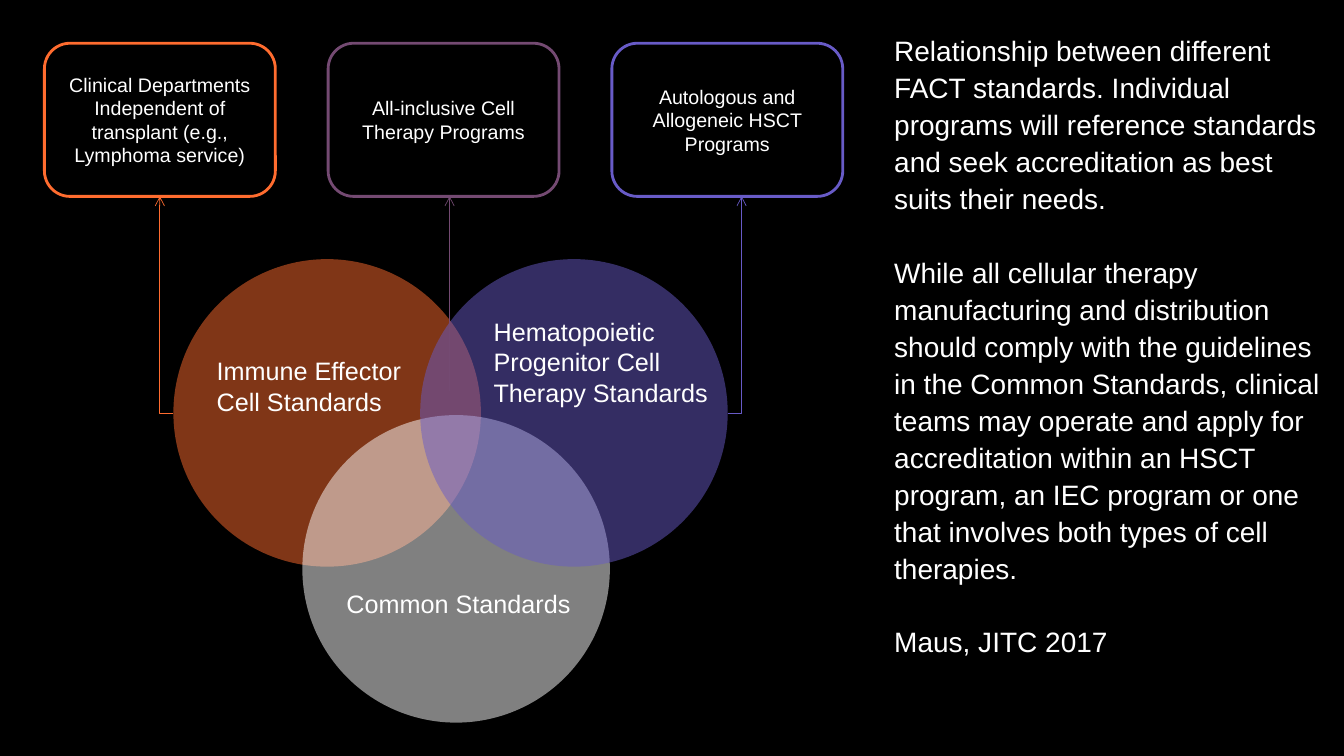
"""Build the slide on how the FACT standards relate to each other."""
from lxml import etree
from pptx import Presentation
from pptx import util as u
from pptx.dml.color import RGBColor
from pptx.enum import shapes, text
from pptx.oxml.ns import qn

COLORS = {"black": "000000", "white": "FFFFFF", "orange": "FF6C2F",
          "plum": "744A72", "violet": "685BC7"}
FONT = "Arial"

SUMMARY = [
    "Relationship between different FACT standards. Individual programs will "
    "reference standards and seek accreditation as best suits their needs.",
    "While all cellular therapy manufacturing and distribution should comply with "
    "the guidelines in the Common Standards, clinical teams may operate and apply "
    "for accreditation within an HSCT program, an IEC program or one that involves "
    "both types of cell therapies.",
    "Maus, JITC 2017",
]
PROGRAMS = [
    ("Clinical Departments Independent of transplant (e.g., Lymphoma service)", "orange"),
    ("All-inclusive Cell Therapy Programs", "plum"),
    ("Autologous and Allogeneic HSCT Programs", "violet"),
]
CIRCLES = [("orange", 4.37, 6.53), ("white", 7.62, 10.46), ("violet", 10.59, 6.53)]
LABELS = [
    ("Immune Effector Cell Standards", 5.21, 8.84, 6.07, 1.8),
    ("Common Standards", 8.48, 14.71, 6.88, 1.02),
    ("Hematopoietic Progenitor Cell Therapy Standards", 12.19, 7.85, 6.07, 2.57),
]
DIAMETER = 7.75
BOX_LEFT, BOX_TOP, BOX_WIDTH, BOX_HEIGHT, BOX_STEP = 1.12, 1.09, 5.82, 3.86, 7.15
BOX_BOTTOM = BOX_TOP + BOX_HEIGHT
CIRCLE_MIDDLE = CIRCLES[0][2] + DIAMETER / 2
ARROWS = [
    ("orange", 4.37, CIRCLE_MIDDLE, BOX_LEFT + BOX_WIDTH / 2),
    ("violet", CIRCLES[2][1] + DIAMETER, CIRCLE_MIDDLE, 18.69),
    ("plum", 11.33, 9.86, 11.33),
]


def rgb(name):
    return RGBColor.from_string(COLORS[name])


def cm(*lengths):
    return [u.Cm(length) for length in lengths]


def write(paragraph, words, size):
    run = paragraph.add_run()
    run.text = words
    run.font.size = u.Pt(size)
    run.font.name = FONT
    run.font.color.rgb = rgb("white")


def add_summary(slide):
    body = slide.placeholders[1]
    body.left, body.top, body.width, body.height = cm(22.28, 0.64, 11.58, 16.81)
    frame = body.text_frame
    frame.auto_size = text.MSO_AUTO_SIZE.NONE
    for index, words in enumerate(SUMMARY):
        paragraph = frame.add_paragraph() if index else frame.paragraphs[0]
        properties = paragraph._p.get_or_add_pPr()
        properties.set("marL", "0")
        properties.set("indent", "0")
        etree.SubElement(properties, qn("a:buNone"))
        paragraph.line_spacing = 1.1
        paragraph.space_before = u.Pt(26.4 if index else 0)
        write(paragraph, words, 20)


def add_venn(slide):
    venn = slide.shapes.add_group_shape()
    for color, left, top in CIRCLES:
        circle = venn.shapes.add_shape(
            shapes.MSO_SHAPE.OVAL, *cm(left, top, DIAMETER, DIAMETER))
        circle.shadow.inherit = False
        circle.fill.solid()
        circle.fill.fore_color.rgb = rgb(color)
        fill_color = circle._element.spPr.find(".//" + qn("a:srgbClr"))
        etree.SubElement(fill_color, qn("a:alpha")).set("val", "50000")
        circle.line.fill.background()
    for words, *place in LABELS:
        frame = venn.shapes.add_textbox(*cm(*place)).text_frame
        frame.word_wrap = True
        frame.auto_size = text.MSO_AUTO_SIZE.SHAPE_TO_FIT_TEXT
        write(frame.paragraphs[0], words, 18)


def add_programs(slide):
    boxes = []
    for index, (words, color) in enumerate(PROGRAMS):
        box = slide.shapes.add_shape(
            shapes.MSO_SHAPE.ROUNDED_RECTANGLE,
            *cm(BOX_LEFT + index * BOX_STEP, BOX_TOP, BOX_WIDTH, BOX_HEIGHT))
        box.shadow.inherit = False
        box.fill.background()
        box.line.color.rgb = rgb(color)
        box.line.width = u.Pt(2)
        frame = box.text_frame
        frame.word_wrap = True
        frame.vertical_anchor = text.MSO_ANCHOR.MIDDLE
        frame.paragraphs[0].alignment = text.PP_ALIGN.CENTER
        write(frame.paragraphs[0], words, 14)
        boxes.append(box)
    return boxes


def add_arrow(slide, color, start_x, start_y, end_x):
    straight = start_x == end_x
    kind = shapes.MSO_CONNECTOR.STRAIGHT if straight else shapes.MSO_CONNECTOR.ELBOW
    arrow = slide.shapes.add_connector(kind, *cm(start_x, start_y, end_x, BOX_BOTTOM))
    arrow.line.color.rgb = rgb(color)
    arrow.line.width = u.Pt(0.5)
    properties = arrow._element.spPr
    if not straight:
        properties.find(qn("a:prstGeom")).set("prst", "bentConnector2")
    etree.SubElement(properties.find(qn("a:ln")), qn("a:tailEnd")).set("type", "arrow")
    etree.SubElement(properties, qn("a:effectLst"))
    return arrow


def main():
    presentation = Presentation()
    presentation.slide_width, presentation.slide_height = cm(33.87, 19.05)
    slide = presentation.slides.add_slide(presentation.slide_layouts[1])
    slide.background.fill.solid()
    slide.background.fill.fore_color.rgb = rgb("black")
    title = slide.shapes.title._element
    title.getparent().remove(title)
    add_summary(slide)
    add_venn(slide)
    boxes = add_programs(slide)
    arrows = [add_arrow(slide, *arrow) for arrow in ARROWS]
    arrows[0].end_connect(boxes[0], 2)
    presentation.save("out.pptx")


if __name__ == "__main__":
    main()
